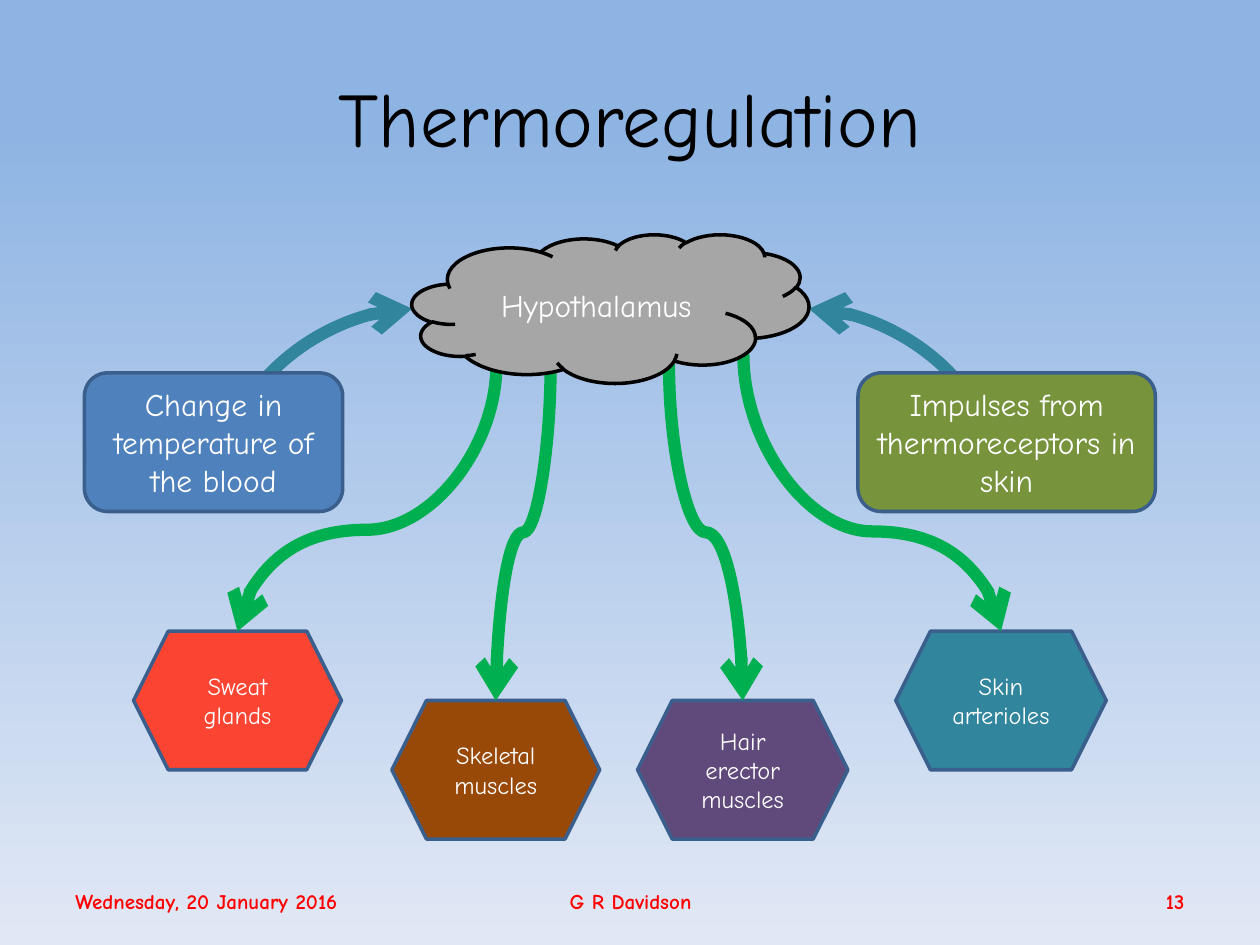
from typing import NamedTuple

from lxml import etree
from pptx import Presentation
from pptx import util as u
from pptx.dml.color import RGBColor
from pptx.enum import shapes, text
from pptx.oxml.ns import qn

COLS, ROWS = 100, 75  # slide grid; one cell is a tenth of an inch


class Theme:
    font = "Comic Neue"
    title, body, small, footer = 44, 18, 14, 12
    sky = ((0.13, "8EB4E3"), (1, "E1E8F5"))
    black, white, red = "000000", "FFFFFF", "FF0000"
    edge, grey = "3A5F8C", "A6A6A6"
    blue, olive, teal, green = "4F81BD", "77933C", "31859C", "00B050"
    tomato, brown, purple = "FB4431", "984807", "604A7B"
    edge_width, arrow_width = 2, 7


class Box(NamedTuple):
    x: float
    y: float
    w: float
    h: float

    def sub(self, x, y, w, h):
        """Return the box at an offset of x columns and y rows inside this one."""
        return Box(self.x + x, self.y + y, w, h)

    def at(self, fx, fy):
        """Return the point at the given shares of the width and height."""
        return self.x + self.w * fx, self.y + self.h * fy

    def emu(self):
        return [u.Inches(v / 10) for v in self]


def rgb(value):
    return RGBColor.from_string(value)


def write(sp, words, size, color, align=text.PP_ALIGN.CENTER, bold=False):
    tf = sp.text_frame
    for name, value in dict(word_wrap=True, vertical_anchor=text.MSO_ANCHOR.MIDDLE).items():
        setattr(tf, name, value)
    p = tf.paragraphs[0]
    p.alignment = align
    r = p.add_run()
    r.text = words
    for name, value in dict(name=Theme.font, size=u.Pt(size), bold=bold).items():
        setattr(r.font, name, value)
    r.font.color.rgb = rgb(color)


def add_label(s, box, words, size, color, **style):
    write(s.shapes.add_textbox(*box.emu()), words, size, color, **style)


def add_node(s, kind, box, words, fill, size, edge=Theme.edge):
    sp = s.shapes.add_shape(kind, *box.emu())
    sp.shadow.inherit = False
    sp.fill.solid()
    sp.fill.fore_color.rgb = rgb(fill)
    sp.line.color.rgb = rgb(edge)
    sp.line.width = u.Pt(Theme.edge_width)
    write(sp, words, size, Theme.white)


def add_curve(s, start, end, color, preset, bend=None):
    """Draw a curved arrow that leaves start vertically.

    The preset runs left to right, so its frame is turned a quarter about
    the middle of the two points, and flipped to suit the direction.
    """
    (x1, y1), (x2, y2) = start, end
    dx, dy = x2 - x1, y2 - y1
    w, h = abs(dy), abs(dx)
    frame = Box((x1 + x2 - w) / 2, (y1 + y2 - h) / 2, w, h)
    sp = s.shapes.add_connector(shapes.MSO_CONNECTOR.CURVE, 0, 0, 0, 0)
    for name, value in zip(("left", "top", "width", "height"), frame.emu()):
        setattr(sp, name, value)
    sp.line.color.rgb = rgb(color)
    sp.line.width = u.Pt(Theme.arrow_width)

    spPr = sp._element.spPr
    turn = 90 if (dx < 0) == (dy > 0) else 270
    xfrm = dict(rot=turn * 60000, flipH=int(dx > 0), flipV=int(dy < 0))
    for name, value in xfrm.items():
        spPr.find(qn("a:xfrm")).set(name, str(value))
    geom = spPr.find(qn("a:prstGeom"))
    geom.set("prst", preset)
    if bend:
        etree.SubElement(geom.find(qn("a:avLst")), qn("a:gd"),
                         name="adj1", fmla=f"val {round(bend * 100000)}")
    etree.SubElement(spPr.find(qn("a:ln")), qn("a:tailEnd"), type="arrow")
    etree.SubElement(spPr, qn("a:effectLst"))


def paint_background(s):
    fill = s.background.fill
    fill.gradient()
    fill.gradient_angle = 270
    for stop, (position, color) in zip(fill.gradient_stops, Theme.sky):
        stop.position = position
        stop.color.rgb = rgb(color)


def add_footer(s, box):
    align = text.PP_ALIGN
    for x, w, words, side in (
        (0, 33.2, "Wednesday, 20 January 2016", align.LEFT),
        (29.2, 31.7, "G R Davidson", align.CENTER),
        (66.7, 23.3, "13", align.RIGHT),
    ):
        add_label(s, box.sub(x, 0, w, box.h), words, Theme.footer, Theme.red,
                  align=side, bold=True)


def add_inputs(s, box, brain):
    """Place the two stimuli, each with an arrow to a side of the brain."""
    for x, w, words, fill, side in (
        (0, 20.5, "Change in temperature of the blood", Theme.blue, 0),
        (61.4, 23.6, "Impulses from thermoreceptors in skin", Theme.olive, 1),
    ):
        node = box.sub(x, 0, w, box.h)
        add_curve(s, node.at(0.5, 1), brain.at(side, 0.5), Theme.teal, "curvedConnector2")
        add_node(s, shapes.MSO_SHAPE.ROUNDED_RECTANGLE, node, words, fill, Theme.body)


def add_outputs(s, box, brain):
    """Place the four effectors, each with an arrow from under the brain."""
    h, drop = box.h * 2 / 3, box.h / 3
    effectors = (
        (0, 0, 16.5, "Sweat glands", Theme.tomato, (6.7, 10.3), 0.62),
        (20.5, drop, 16.5, "Skeletal muscles", Theme.brown, (11, 10.3), None),
        (40, drop, 16.7, "Hair erector muscles", Theme.purple, (20.4, 10.3), None),
        (60.5, 0, 16.7, "Skin arterioles", Theme.teal, (26.3, 9.5), 0.64),
    )
    for x, y, w, words, fill, (dx, dy), bend in effectors:
        node = box.sub(x, y, w, h)
        add_node(s, shapes.MSO_SHAPE.HEXAGON, node, words, fill, Theme.small)
        add_curve(s, (brain.x + dx, brain.y + dy), node.at(0.5, 0),
                  Theme.green, "curvedConnector3", bend)


def main():
    prs = Presentation()
    prs.slide_width, prs.slide_height = u.Inches(COLS / 10), u.Inches(ROWS / 10)
    s = prs.slides.add_slide(prs.slide_layouts[6])
    brain = Box(32.7, 18.6, 31.5, 11.8)

    paint_background(s)
    add_label(s, Box(5, 3, 90, 12.5), "Thermoregulation", Theme.title, Theme.black)
    add_footer(s, Box(5, 69.5, 90, 4))
    add_inputs(s, Box(6.7, 29.6, 85, 11), brain)
    add_outputs(s, Box(10.6, 50.1, 77.2, 16.5), brain)
    add_node(s, shapes.MSO_SHAPE.CLOUD, brain, "Hypothalamus", Theme.grey,
             Theme.body, edge=Theme.black)
    prs.save("out.pptx")


if __name__ == "__main__":
    main()
